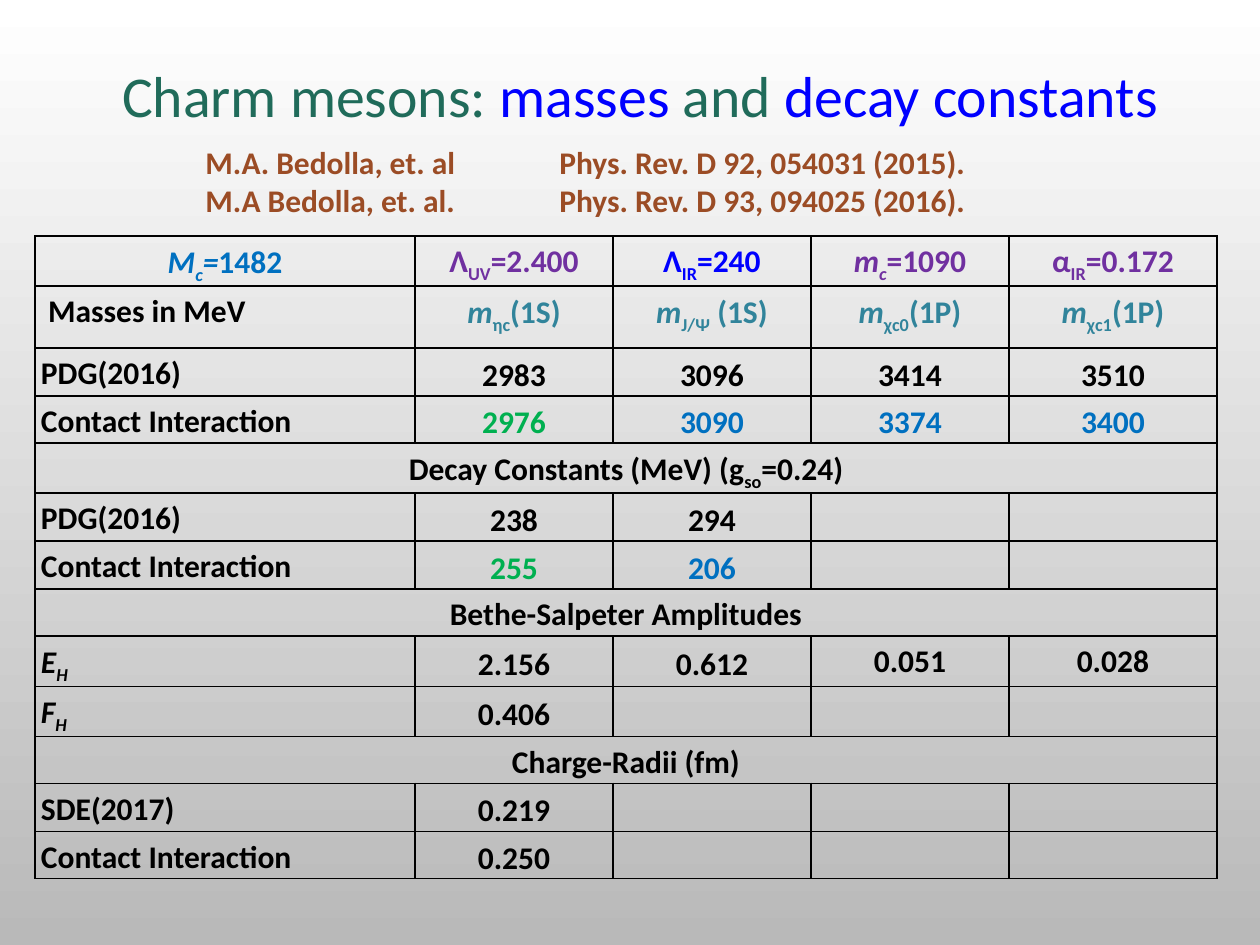
from dataclasses import dataclass
from typing import NamedTuple

from lxml.etree import SubElement
from pptx import Presentation
from pptx.dml.color import RGBColor
from pptx.enum.text import MSO_ANCHOR, PP_ALIGN
from pptx.oxml import parse_xml
from pptx.oxml.ns import nsdecls, qn
from pptx.util import Emu, Pt

EMU_PER_PX = 914400 / 126
FONT = "Calibri"
BLACK, BLUE, PURPLE = "000000", "0000FF", "7030A0"
SKY, TEAL, GREEN = "0070C0", "31849B", "00B050"
BROWN, PINE = "9B4C25", "206B5A"
COLUMN_WIDTHS = (380, 198, 198, 198, 208)


class Span(NamedTuple):
    text: str
    sub: bool = False
    italic: bool = False


@dataclass(frozen=True)
class Entry:
    spans: tuple[Span, ...]
    colour: str = BLACK
    centred: bool = True
    middle: bool = False
    inset: int = 6


@dataclass(frozen=True)
class Row:
    height: int
    entries: tuple[Entry, ...]
    merged: bool = False


def px(length: int) -> Emu:
    return Emu(round(length * EMU_PER_PX))


def rgb(colour: str) -> RGBColor:
    return RGBColor.from_string(colour)


def label(*spans: Span) -> Entry:
    return Entry(spans, centred=False)


def value(text: str, colour: str = BLACK, middle: bool = True) -> Entry:
    return Entry((Span(text),), colour, middle=middle)


def parameter(symbol: str, sub: str, tail: str, colour: str = PURPLE, italic: bool = False) -> Entry:
    spans = (Span(symbol, italic=italic), Span(sub, sub=True, italic=italic), Span(tail))
    return Entry(spans, colour, inset=0)


def meson(sub: str, state: str) -> Entry:
    return Entry((Span("m", italic=True), Span(sub, sub=True), Span(state)), TEAL)


def heading(height: int, *spans: Span) -> Row:
    return Row(height, (Entry(spans),), merged=True)


def data(height: int, name: str, *values: Entry) -> Row:
    return Row(height, (label(Span(name)), *values))


def amplitude(symbol: str, *values: Entry) -> Row:
    name = label(Span(symbol, italic=True), Span("H", sub=True, italic=True))
    return Row(50, (name, *values))


CHARM_MASS = Entry(
    (Span("M", italic=True), Span("c", sub=True, italic=True), Span("=", italic=True), Span("1482")), SKY
)
ROWS = (
    Row(49, (
        CHARM_MASS,
        parameter("Λ", "UV", "=2.400"),
        parameter("Λ", "IR", "=240", BLUE),
        parameter("m", "c", "=1090", italic=True),
        parameter("α", "IR", "=0.172"),
    )),
    Row(62, (
        label(Span(" Masses in MeV")),
        meson("ηc", "(1S)"),
        meson("J/Ψ", " (1S)"),
        meson("χc0", "(1P)"),
        meson("χc1", "(1P)"),
    )),
    data(48, "PDG(2016)", *map(value, ("2983", "3096", "3414", "3510"))),
    data(47, "Contact Interaction", value("2976", GREEN),
         *(value(mass, SKY) for mass in ("3090", "3374", "3400"))),
    heading(49, Span("Decay Constants (MeV) (g"), Span("so", sub=True), Span("=0.24)")),
    data(48, "PDG(2016)", value("238"), value("294")),
    data(48, "Contact Interaction", value("255", GREEN), value("206", SKY)),
    heading(47, Span("Bethe-Salpeter Amplitudes")),
    amplitude("E", value("2.156"), value("0.612"),
              value("0.051", middle=False), value("0.028", middle=False)),
    amplitude("F", value("0.406")),
    heading(47, Span("Charge-Radii (fm)")),
    data(48, "SDE(2017)", value("0.219")),
    data(47, "Contact Interaction", value("0.250")),
)
TITLE = (("Charm mesons: ", PINE), ("masses", BLUE), (" and ", PINE), ("decay constants", BLUE))
CITATIONS = (
    "M.A. Bedolla, et. al\tPhys. Rev. D 92, 054031 (2015).",
    "M.A Bedolla, et. al.\tPhys. Rev. D 93, 094025 (2016).",
)


def set_font(para, size: int, colour: str | None = None, bold: bool = False) -> None:
    font = para.font
    font.name, font.size, font.bold = FONT, Pt(size), bold
    if colour:
        font.color.rgb = rgb(colour)


def add_text_frame(page, left: int, top: int, width: int, height: int):
    frame = page.shapes.add_textbox(px(left), px(top), px(width), px(height)).text_frame
    frame.word_wrap = True
    return frame


def format_cell(cell) -> None:
    """Clear the fill, draw black borders and tighten the margins."""
    cell.fill.background()
    properties = cell._tc.get_or_add_tcPr()
    for position, side in enumerate(("lnL", "lnR", "lnT", "lnB")):
        properties.insert(position, parse_xml(
            f'<a:{side} {nsdecls("a")} w="12700"><a:solidFill>'
            f'<a:srgbClr val="{BLACK}"/></a:solidFill></a:{side}>'
        ))
    cell.margin_left = cell.margin_right = px(6)
    cell.margin_top, cell.margin_bottom = px(1), 0


def write_entry(cell, entry: Entry) -> None:
    cell.margin_left = cell.margin_right = px(entry.inset)
    cell.margin_top = px(1 if entry.inset else 0)
    cell.vertical_anchor = MSO_ANCHOR.MIDDLE if entry.middle else MSO_ANCHOR.TOP
    para = cell.text_frame.paragraphs[0]
    para.alignment = PP_ALIGN.CENTER if entry.centred else PP_ALIGN.LEFT
    para.line_spacing = 1.15
    para.space_after = Pt(10)
    set_font(para, 18, entry.colour, bold=True)
    for span in entry.spans:
        run = para.add_run()
        run.text = span.text
        if span.italic:
            run.font.italic = True
        if span.sub:
            run._r.get_or_add_rPr().set("baseline", "-25000")


def add_meson_table(page) -> None:
    frame = page.shapes.add_table(
        len(ROWS), len(COLUMN_WIDTHS), px(35), px(236),
        px(sum(COLUMN_WIDTHS)), px(sum(row.height for row in ROWS)),
    )
    table = frame.table
    table.first_row = table.horz_banding = False
    for column, width in zip(table.columns, COLUMN_WIDTHS):
        column.width = px(width)
    for index, row in enumerate(ROWS):
        table.rows[index].height = px(row.height)
        cells = [table.cell(index, column) for column in range(len(COLUMN_WIDTHS))]
        if row.merged:
            cells[0].merge(cells[-1])
        for cell in cells:
            format_cell(cell)
        for cell, entry in zip(cells, row.entries):
            write_entry(cell, entry)


def add_citations(page) -> None:
    frame = add_text_frame(page, 193, 137, 830, 90)
    for index, citation in enumerate(CITATIONS):
        para = frame.add_paragraph() if index else frame.paragraphs[0]
        tabs = SubElement(para._p.get_or_add_pPr(), qn("a:tabLst"))
        SubElement(tabs, qn("a:tab"), pos=str(px(354)), algn="l")
        set_font(para, 18, BROWN, bold=True)
        para.add_run().text = citation


def add_title(page) -> None:
    frame = add_text_frame(page, 52, 30, 1176, 105)
    frame.vertical_anchor = MSO_ANCHOR.BOTTOM
    para = frame.paragraphs[0]
    para.alignment = PP_ALIGN.CENTER
    set_font(para, 33)
    for text, colour in TITLE:
        run = para.add_run()
        run.text = text
        run.font.color.rgb = rgb(colour)


def main() -> None:
    deck = Presentation()
    deck.slide_width, deck.slide_height = px(1260), px(945)
    page = deck.slides.add_slide(deck.slide_layouts[6])
    fill = page.background.fill
    fill.gradient()
    fill.gradient_angle = 270
    for stop, colour in zip(fill.gradient_stops, ("FFFFFF", "B9B9B9")):
        stop.color.rgb = rgb(colour)
    add_meson_table(page)
    add_citations(page)
    add_title(page)
    deck.save("out.pptx")


if __name__ == "__main__":
    main()
